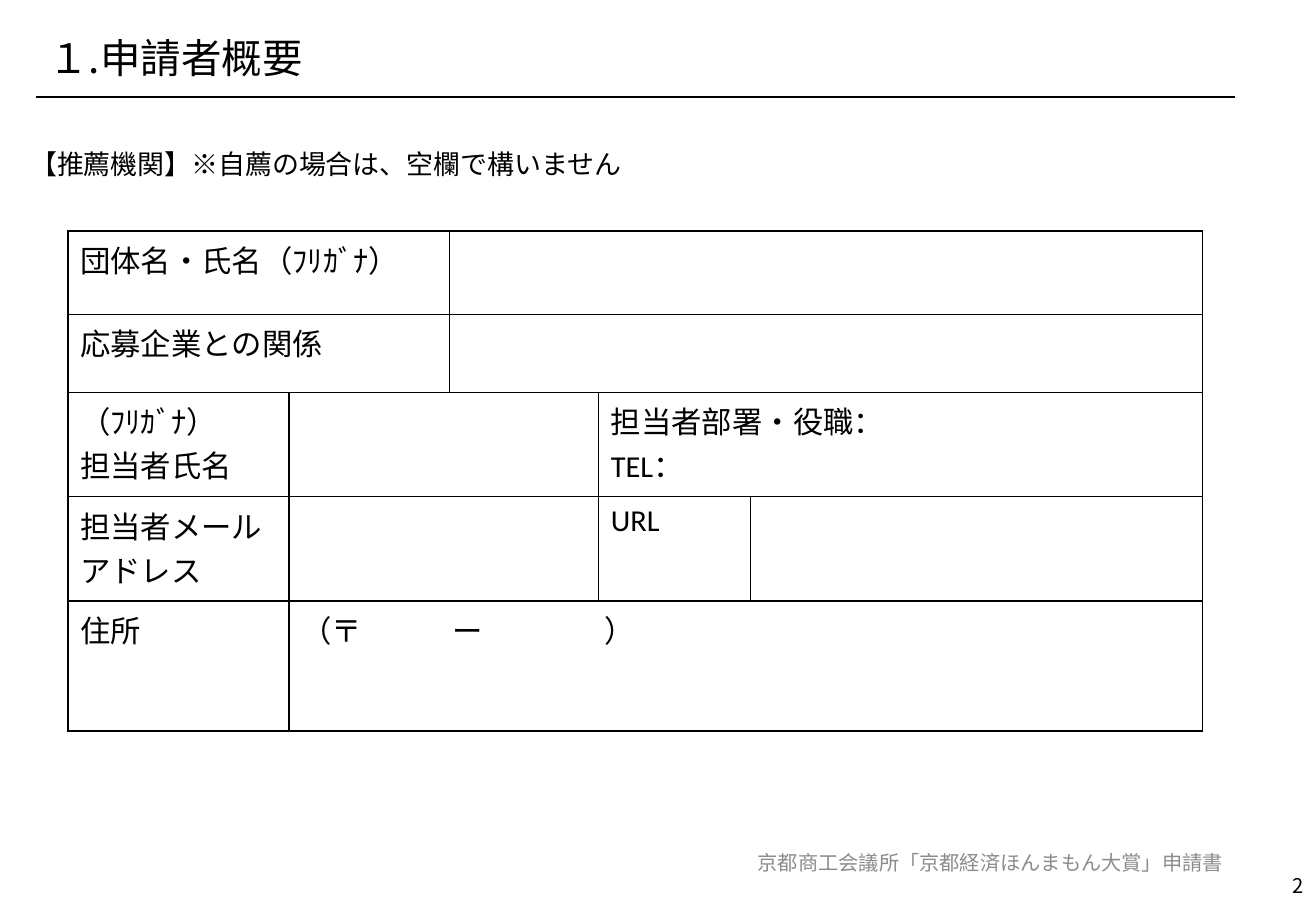
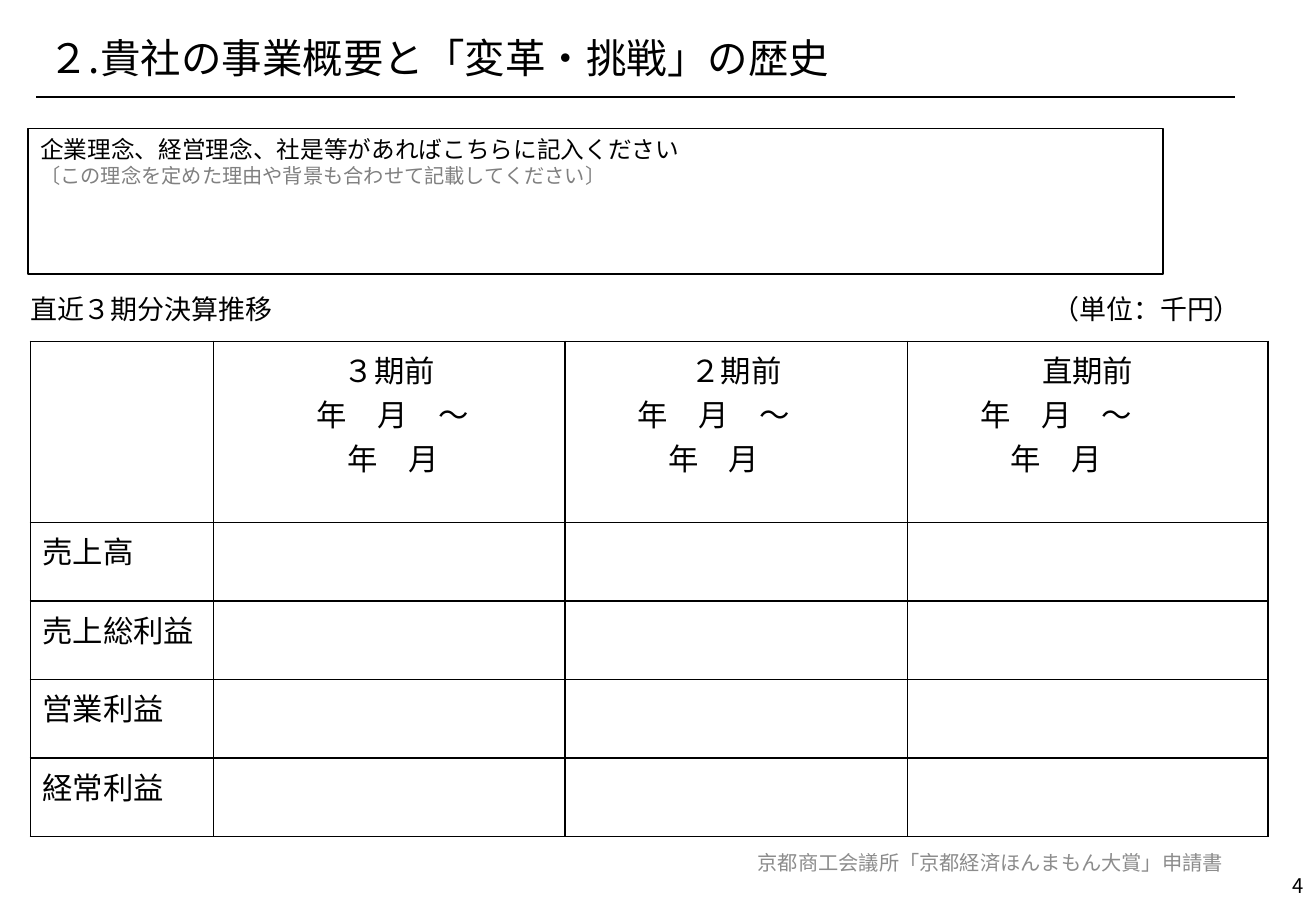
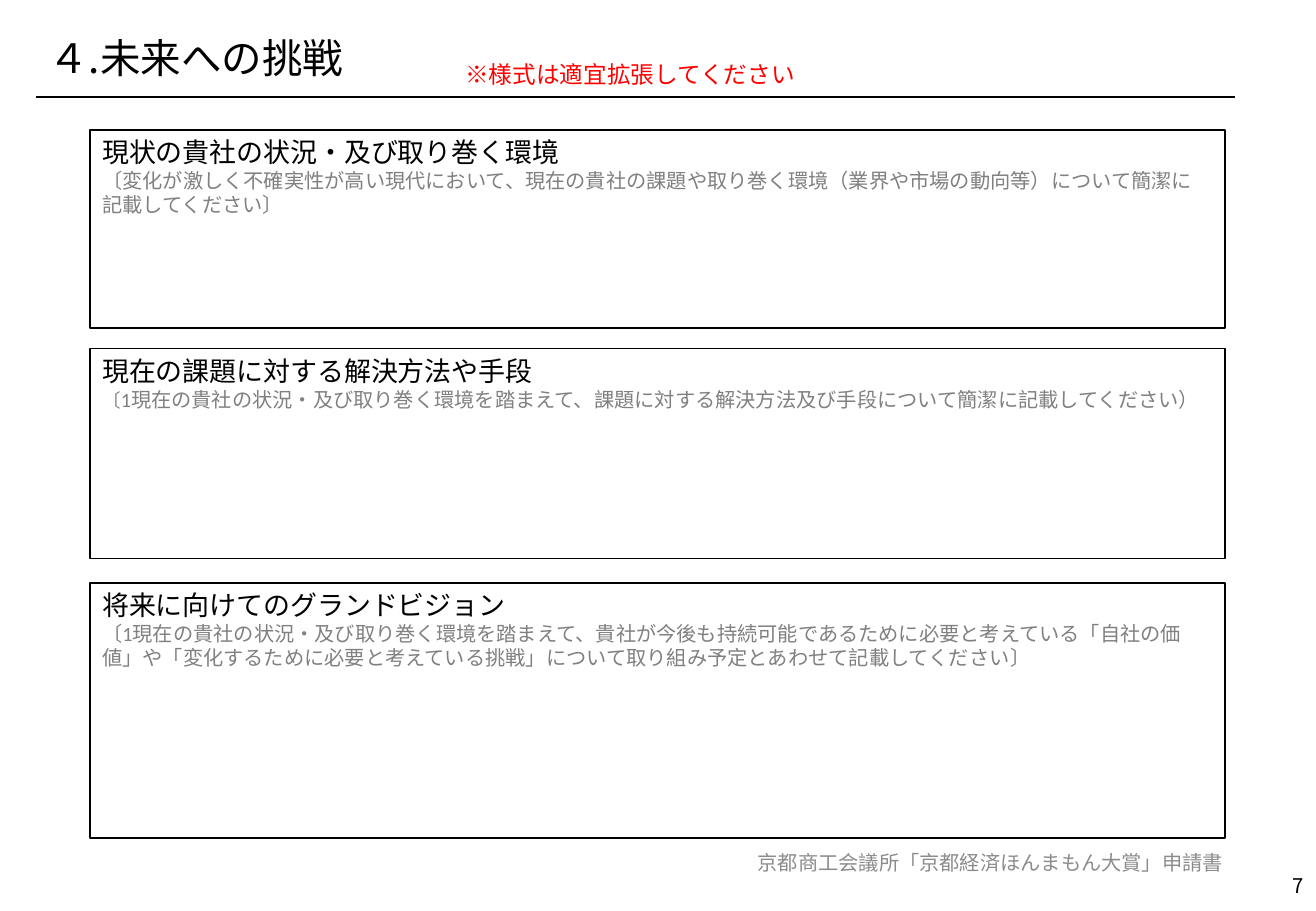
import dataclasses

import pptx
import pptx.dml.color
import pptx.enum.shapes
import pptx.enum.text
import pptx.oxml
import pptx.oxml.ns
import pptx.util
from lxml import etree

Pt = pptx.util.Pt
RGB = pptx.dml.color.RGBColor.from_string
qn = pptx.oxml.ns.qn
ALIGN = pptx.enum.text.PP_ALIGN
ANCHOR = pptx.enum.text.MSO_ANCHOR


@dataclasses.dataclass(frozen=True)
class Theme:
    """Colours, fonts and type sizes; a style is (latin, east asian, size, colour)."""
    ink: str = "000000"
    hint_grey: str = "808080"
    footer_grey: str = "8C8C8C"
    alert: str = "FF0000"
    cjk: str = "Noto Sans CJK JP"
    latin: str = "Calibri"
    bracket_font: str = "Arial"
    rule: float = 1

    def __getitem__(self, role):
        return {
            "title": (self.cjk, self.cjk, 24, self.ink),
            "lead": (self.cjk, self.cjk, 16, self.ink),
            "prompt": (self.cjk, self.cjk, 14, self.ink),
            "cell": (self.latin, self.cjk, 18, self.ink),
            "hint": (self.latin, self.latin, 12, self.hint_grey),
            "bracket": (self.bracket_font, self.bracket_font, 12, self.hint_grey),
            "small bracket": (self.bracket_font, self.bracket_font, 11, self.hint_grey),
            "note": (self.latin, self.latin, 14, self.alert),
            "footer": (self.cjk, self.cjk, 12, self.footer_grey),
            "page": (self.cjk, self.cjk, 12, self.ink),
        }[role]


THEME = Theme()
SLIDE_SIZE = (780, 540)
TITLE_BOX = (21.6, 13.7, 651.6, 43.9)
RULE_Y, RULE_LEFT, RULE_RIGHT = 57.6, 21.6, 732.2
FOOTER_BOX = (353.5, 496.8, 378.7, 28.8)
PAGE_BOX = (748, 510, 32, 30)
FOOTER = "京都商工会議所「京都経済ほんまもん大賞」申請書"
ENTRY_WIDTH = 672.5


# Text
def apply(target, values):
    for name, value in values.items():
        setattr(target, name, value)


def write_line(paragraph, runs, indent=0, tabs=(), **layout):
    """Fill a paragraph with (role, text) runs."""
    properties = paragraph._p.get_or_add_pPr()
    if indent:
        properties.set("marL", str(Pt(indent)))
        properties.set("indent", "0")
    if tabs:
        stops = etree.SubElement(properties, qn("a:tabLst"))
        for stop in tabs:
            etree.SubElement(stops, qn("a:tab"), pos=str(Pt(stop)), algn="l")
    apply(paragraph, layout)
    for role, text in runs:
        latin, east_asian, size, colour = THEME[role]
        run = paragraph.add_run()
        run.text = text
        apply(run.font, {"name": latin, "size": Pt(size)})
        run.font.color.rgb = RGB(colour)
        etree.SubElement(run._r.get_or_add_rPr(), qn("a:ea"), typeface=east_asian)


def write_lines(frame, lines):
    for number, line in enumerate(lines):
        paragraph = frame.add_paragraph() if number else frame.paragraphs[0]
        write_line(paragraph, **line)


def place_text(slide, box, role, text, anchor=ANCHOR.TOP, **layout):
    frame = slide.shapes.add_textbox(*map(Pt, box)).text_frame
    apply(frame, {"word_wrap": True, "vertical_anchor": anchor})
    write_line(frame.paragraphs[0], [(role, text)], **layout)


# Frame shared by every slide
def start_slide(deck, title, page):
    slide = deck.slides.add_slide(deck.slide_layouts[6])
    place_text(slide, TITLE_BOX, "title", title, ANCHOR.MIDDLE, line_spacing=0.9)
    rule = slide.shapes.add_connector(
        pptx.enum.shapes.MSO_CONNECTOR.STRAIGHT,
        Pt(RULE_LEFT), Pt(RULE_Y), Pt(RULE_RIGHT), Pt(RULE_Y))
    rule.line.width = Pt(THEME.rule)
    rule.line.color.rgb = RGB(THEME.ink)
    etree.SubElement(rule._element.spPr, qn("a:effectLst"))
    for box, role, text in ((FOOTER_BOX, "footer", FOOTER), (PAGE_BOX, "page", str(page))):
        place_text(slide, box, role, text, ANCHOR.MIDDLE, alignment=ALIGN.RIGHT)
    return slide


# Outlined answer box: heading and grey hint
def entry_box(slide, box, heading_role, heading, hint_runs):
    entry = slide.shapes.add_shape(pptx.enum.shapes.MSO_SHAPE.RECTANGLE, *map(Pt, box))
    entry.shadow.inherit = False
    entry.fill.background()
    entry.line.width = Pt(THEME.rule)
    entry.line.color.rgb = RGB(THEME.ink)
    apply(entry.text_frame, {"word_wrap": True, "vertical_anchor": ANCHOR.TOP})
    write_lines(entry.text_frame, [
        {"runs": [(heading_role, heading)], "alignment": ALIGN.LEFT},
        {"runs": hint_runs, "alignment": ALIGN.LEFT},
    ])


# Form table
def border_cell(cell):
    cell.fill.background()
    properties = cell._tc.get_or_add_tcPr()
    for position, side in enumerate(("lnL", "lnR", "lnT", "lnB")):
        edge = etree.Element(qn("a:" + side), w=str(Pt(THEME.rule)))
        fill = etree.SubElement(edge, qn("a:solidFill"))
        etree.SubElement(fill, qn("a:srgbClr"), val=THEME.ink)
        properties.insert(position, edge)


def form_table(slide, origin, widths, heights, entries, merges=()):
    """entries maps (row, column) to lines; merges lists (row, first, last column)."""
    size = (sum(widths), sum(heights))
    grid = slide.shapes.add_table(
        len(heights), len(widths), *map(Pt, origin + size)).table
    apply(grid, {"first_row": False, "horz_banding": False})
    for column, width in zip(grid.columns, widths):
        column.width = Pt(width)
    for row, height in zip(grid.rows, heights):
        row.height = Pt(height)
    for cell in grid.iter_cells():
        border_cell(cell)
    for row, first, last in merges:
        grid.cell(row, first).merge(grid.cell(row, last))
    for place, lines in entries.items():
        write_lines(grid.cell(*place).text_frame, lines)


def cell_line(text, **layout):
    return {"runs": [("cell", text)], **layout}


# Slides
def applicant_slide(deck):
    slide = start_slide(deck, "１.申請者概要", 2)
    place_text(slide, (10.8, 84.2, ENTRY_WIDTH, 36), "lead",
               "【推薦機関】※自薦の場合は、空欄で構いません")
    labels = {
        (0, 0): ["団体名・氏名（ﾌﾘｶﾞﾅ）"],
        (1, 0): ["応募企業との関係"],
        (2, 0): ["（ﾌﾘｶﾞﾅ）", "担当者氏名"],
        (2, 3): ["担当者部署・役職：", "TEL："],
        (3, 0): ["担当者メールアドレス"],
        (3, 3): ["URL"],
        (4, 0): ["住所"],
    }
    entries = {place: [cell_line(text) for text in texts]
               for place, texts in labels.items()}
    entries[4, 1] = [cell_line("（〒\tー\t）", tabs=(90, 180))]
    form_table(slide, (40.3, 136.8), (131, 95, 88.6, 90, 267.8),
               (49.7, 46.1, 61.9, 61.9, 77), entries,
               merges=((0, 0, 1), (0, 2, 4), (1, 0, 1), (1, 2, 4),
                       (2, 1, 2), (2, 3, 4), (3, 1, 2), (4, 1, 4)))


def history_slide(deck):
    slide = start_slide(deck, "２.貴社の事業概要と「変革・挑戦」の歴史", 4)
    place_text(slide, (10.8, 169.9, 740.9, 370), "lead",
               "直近３期分決算推移\t（単位：千円）", tabs=(606,))
    periods = (("３期前", 54), ("２期前", 36), ("直期前", 36))
    entries = {
        (0, column): [
            cell_line(period, alignment=ALIGN.CENTER),
            cell_line("年　月　～", indent=indent),
            cell_line("年　月", indent=indent + 18),
        ]
        for column, (period, indent) in enumerate(periods, 1)
    }
    measures = ("売上高", "売上総利益", "営業利益", "経常利益")
    for row, measure in enumerate(measures, 1):
        entries[row, 0] = [cell_line(measure)]
    form_table(slide, (18, 202.3), (108.7, 208.1, 203.1, 213.6),
               (107.4,) + (46.6,) * len(measures), entries)
    entry_box(slide, (16.8, 76.2, ENTRY_WIDTH, 86.4), "prompt",
              "企業理念、経営理念、社是等があればこちらに記入ください",
              [("hint", "〔この理念を定めた理由や背景も合わせて記載してください〕")])


def future_slide(deck):
    slide = start_slide(deck, "４.未来への挑戦", 7)
    place_text(slide, (268.6, 31.7, 480, 24.5), "note", "※様式は適宜拡張してください")
    questions = (
        (77, 117.4, "現状の貴社の状況・及び取り巻く環境", [
            ("hint", "〔変化が激しく不確実性が高い現代において、現在の貴社の課題や取り巻く環境"
                     "（業界や市場の動向等）について簡潔に記載してください〕")]),
        (206.6, 124.6, "現在の課題に対する解決方法や手段", [
            ("small bracket", "〔"),
            ("hint", "1現在の貴社の状況・及び取り巻く環境を踏まえて、"
                     "課題に対する解決方法及び手段について簡潔に記載してください）")]),
        (345.6, 151.2, "将来に向けてのグランドビジョン", [
            ("bracket", "〔"),
            ("hint", "1現在の貴社の状況・及び取り巻く環境を踏まえて、"
                     "貴社が今後も持続可能であるために必要と考えている「自社の価値」や"
                     "「変化するために必要と考えている挑戦」について"
                     "取り組み予定とあわせて記載してください"),
            ("bracket", "〕")]),
    )
    for top, height, heading, hint_runs in questions:
        entry_box(slide, (53.5, top, ENTRY_WIDTH, height), "lead", heading, hint_runs)


def main():
    deck = pptx.Presentation()
    deck.slide_width, deck.slide_height = map(Pt, SLIDE_SIZE)
    for build in (applicant_slide, history_slide, future_slide):
        build(deck)
    deck.save("out.pptx")


if __name__ == "__main__":
    main()
